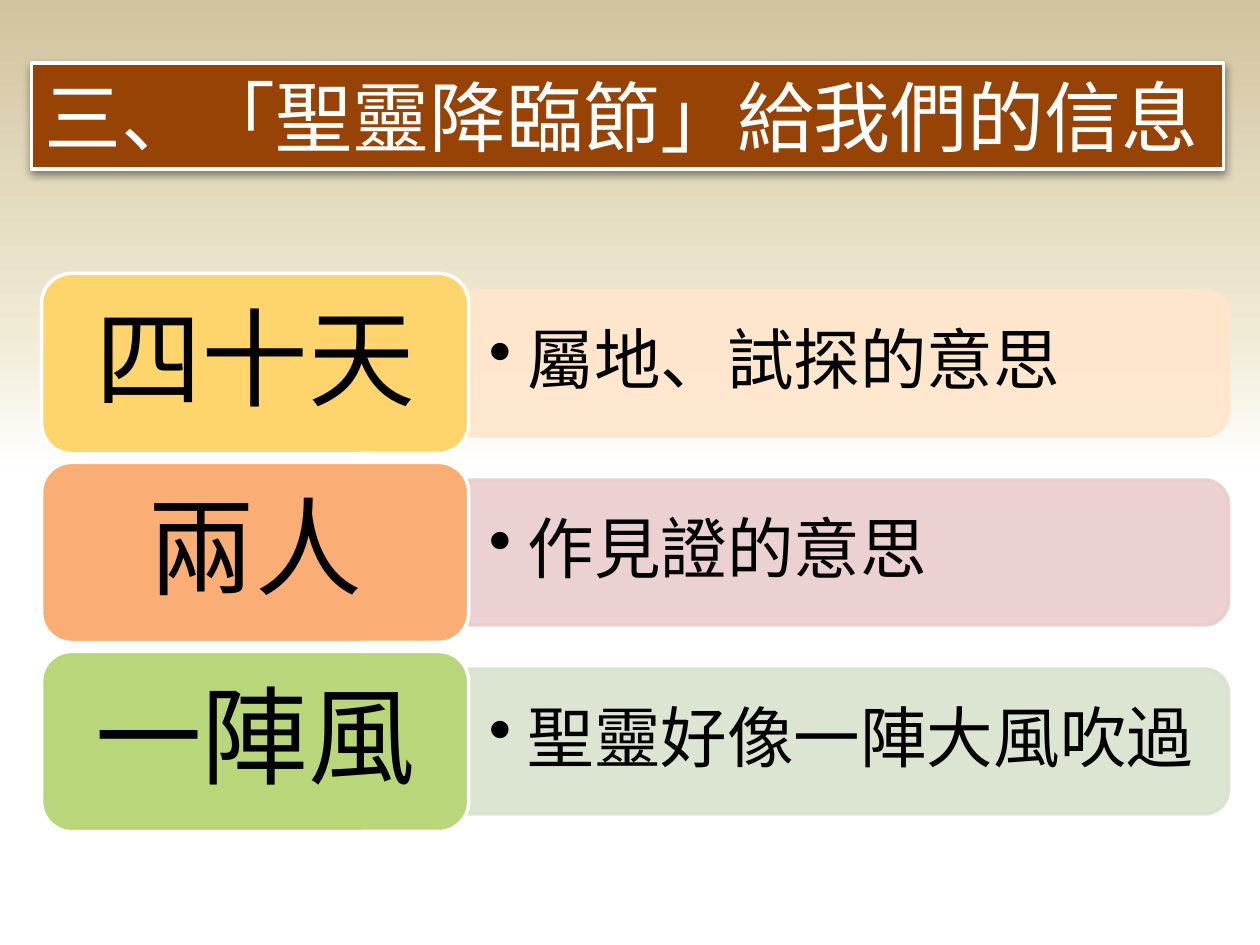
from dataclasses import dataclass

from lxml import etree
from pptx import Presentation
from pptx.dml.color import RGBColor
from pptx.enum.shapes import MSO_SHAPE as Shape
from pptx.enum.text import MSO_ANCHOR as Anchor, MSO_AUTO_SIZE as AutoSize, PP_ALIGN as Align
from pptx.oxml import parse_xml
from pptx.oxml.ns import qn
from pptx.util import Inches, Pt

DRAWING_NS = 'xmlns:a="http://schemas.openxmlformats.org/drawingml/2006/main"'


@dataclass(frozen=True)
class Theme:
    white: str = "FFFFFF"
    black: str = "000000"
    banner: str = "964305"
    backdrop: tuple = ((50, "FFFFFF"), (65, "F0EBD5"), (100, "D1C39F"))
    title_size: int = 44
    label_size: int = 61
    detail_size: int = 38
    border: int = 2
    heading_font: str = "Arial"
    body_font: str = "Calibri"


theme = Theme()


def paint(box, fill, line, opacity=100):
    """Give a shape a solid fill and border, both with the same opacity."""
    box.fill.solid()
    box.fill.fore_color.rgb = RGBColor.from_string(fill)
    box.line.color.rgb = RGBColor.from_string(line)
    box.line.width = Pt(theme.border)
    if opacity < 100:
        for color in box._element.spPr.iter(qn("a:srgbClr")):
            etree.SubElement(color, qn("a:alpha"), val=str(opacity * 1000))


def write(box, text, font, size, color, align, margins, spacing=None):
    """Write one vertically centred paragraph and return it."""
    frame = box.text_frame
    frame.word_wrap = True
    frame.vertical_anchor = Anchor.MIDDLE
    frame.margin_left = frame.margin_right = Inches(margins[0])
    frame.margin_top = frame.margin_bottom = Inches(margins[1])
    para = frame.paragraphs[0]
    para.alignment = align
    para.line_spacing = spacing
    span = para.add_run()
    span.text = text
    span.font.name = font
    span.font.size = Pt(size)
    span.font.color.rgb = RGBColor.from_string(color)
    return para


deck = Presentation()
deck.slide_width, deck.slide_height = Inches(10), Inches(7.5)
page = deck.slides.add_slide(deck.slide_layouts[5])

# Background: gradient running from the bottom edge to the top
page.background.fill.solid()
plain_fill = page.background._cSld.bg.bgPr.find(qn("a:solidFill"))
stops = "".join(
    f'<a:gs pos="{place * 1000}"><a:srgbClr val="{color}"/></a:gs>'
    for place, color in theme.backdrop
)
plain_fill.getparent().replace(plain_fill, parse_xml(
    f'<a:gradFill {DRAWING_NS} rotWithShape="1"><a:gsLst>{stops}</a:gsLst>'
    f'<a:lin ang="{270 * 60000}" scaled="0"/></a:gradFill>'
))

# Title banner with a soft shadow below
title = page.shapes.title
title.left, title.top = Inches(0.25), Inches(0.5)
title.width, title.height = Inches(9.46), Inches(0.84)
paint(title, theme.banner, theme.white)
write(title, "三、「聖靈降臨節」給我們的信息", theme.heading_font, theme.title_size,
      theme.white, Align.LEFT, (0.1, 0.05))
title.text_frame.word_wrap = False
title.text_frame.auto_size = AutoSize.SHAPE_TO_FIT_TEXT
title._element.spPr.append(parse_xml(
    f'<a:effectLst {DRAWING_NS}><a:outerShdw blurRad="{Pt(5)}" dist="{Pt(2)}" '
    f'dir="{90 * 60000}" rotWithShape="0"><a:srgbClr val="{theme.black}">'
    '<a:alpha val="43000"/></a:srgbClr></a:outerShdw></a:effectLst>'
))

# Rows: label, its colour, detail, panel colour
rows = [
    ("四十天", "FED46C", "屬地、試探的意思", "FFE6CC"),
    ("兩人", "FAAE76", "作見證的意思", "E9CDCD"),
    ("一陣風", "B9D77A", "聖靈好像一陣大風吹過", "D9E2CE"),
]
first_top, row_pitch = Inches(2.17), Inches(1.5)
label_left, label_width, label_height = Inches(0.33), Inches(3.39), Inches(1.43)
panel_left = label_left + label_width
panel_width, panel_height = Inches(6.03), Inches(1.15)
detail_width, detail_height = Inches(5.97), Inches(1.03)

for index, (label_text, label_color, detail_text, panel_color) in enumerate(rows):
    top = first_top + index * row_pitch
    middle = top + label_height // 2

    # Panel: upright shape turned so that its round corners face right
    panel = page.shapes.add_shape(
        Shape.ROUND_2_SAME_RECTANGLE,
        panel_left + (panel_width - panel_height) // 2, middle - panel_width // 2,
        panel_height, panel_width)
    panel.rotation = 90
    panel.shadow.inherit = False
    paint(panel, panel_color, panel_color, opacity=90)

    # Bulleted detail
    detail = page.shapes.add_textbox(
        panel_left, middle - detail_height // 2, detail_width, detail_height)
    para = write(detail, detail_text, theme.body_font, theme.detail_size,
                 theme.black, Align.LEFT, (0.16, 0.08), 0.9)
    bullet_props = para._p.get_or_add_pPr()
    bullet_props.set("marL", str(Inches(0.31)))
    bullet_props.set("indent", str(-Inches(0.31)))
    etree.SubElement(bullet_props, qn("a:buChar"), char="•")

    # Label
    label = page.shapes.add_shape(
        Shape.ROUNDED_RECTANGLE, label_left, top, label_width, label_height)
    label.shadow.inherit = False
    paint(label, label_color, theme.white)
    write(label, label_text, theme.heading_font, theme.label_size,
          theme.black, Align.CENTER, (0.25, 0.13), 0.9)

deck.save("out.pptx")
